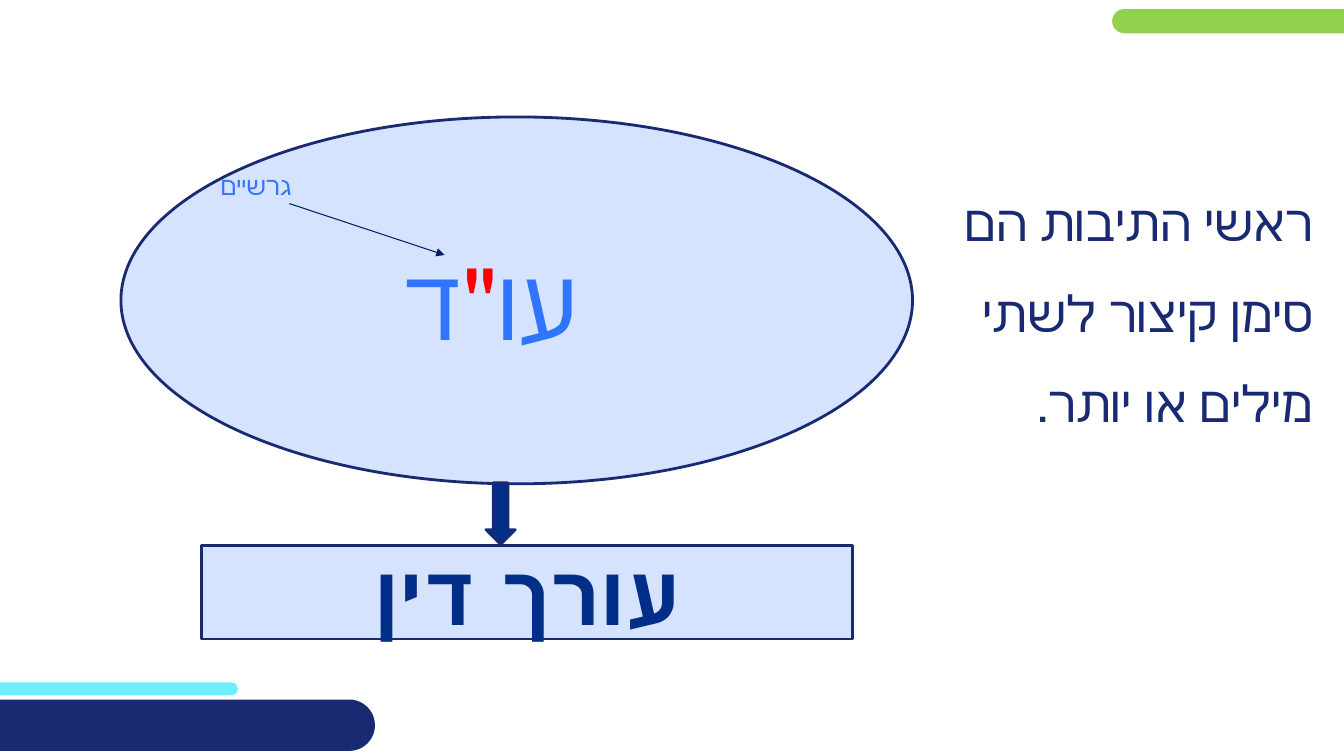
import pptx
import pptx.dml.color
import pptx.enum.shapes
import pptx.enum.text
import pptx.oxml
import pptx.oxml.ns
import pptx.util

RGBColor = pptx.dml.color.RGBColor
SHAPE = pptx.enum.shapes.MSO_SHAPE
ALIGN = pptx.enum.text.PP_ALIGN
ANCHOR = pptx.enum.text.MSO_ANCHOR

NAVY = RGBColor(0x19, 0x2A, 0x72)
DEEP_BLUE = RGBColor(0x00, 0x2E, 0x89)
POINTER_BLUE = RGBColor(0x00, 0x20, 0x60)
BRIGHT_BLUE = RGBColor(0x30, 0x75, 0xFF)
PALE_BLUE = RGBColor(0xD6, 0xE3, 0xFF)
CYAN = RGBColor(0x6C, 0xF0, 0xFF)
GREEN = RGBColor(0x92, 0xD0, 0x50)
RED = RGBColor(0xFF, 0x00, 0x00)

FONT = "TeX Gyre Adventor"
SLIDE_WIDTH = pptx.util.Inches(13.33)
SLIDE_HEIGHT = pptx.util.Inches(7.5)


def share(*percents):
    """Turn alternating horizontal and vertical percentages into lengths."""
    sides = (SLIDE_WIDTH, SLIDE_HEIGHT) * 2
    return [int(side * percent / 100) for side, percent in zip(sides, percents)]


def add_figure(slide, kind, area, fill, outline=None):
    figure = slide.shapes.add_shape(kind, *share(*area))
    figure.shadow.inherit = False
    figure.fill.solid()
    figure.fill.fore_color.rgb = fill
    if outline is None:
        figure.line.fill.background()
    else:
        figure.line.color.rgb = outline
        figure.line.width = pptx.util.Pt(2)
    return figure


def add_bar(slide, area, fill):
    bar = add_figure(slide, SHAPE.ROUNDED_RECTANGLE, area, fill)
    bar.adjustments[0] = 0.5


def write_hebrew(holder, pieces, size, align, anchor, bold=False):
    """Fill a shape with one right-to-left paragraph of (text, colour) runs."""
    frame = holder.text_frame
    frame.word_wrap = True
    frame.vertical_anchor = anchor
    paragraph = frame.paragraphs[0]
    paragraph.alignment = align
    paragraph._p.get_or_add_pPr().set("rtl", "1")
    for text, colour in pieces:
        run = paragraph.add_run()
        run.text = text
        run.font.size = pptx.util.Pt(size)
        run.font.bold = bold
        run.font.name = FONT
        run.font.color.rgb = colour
        run._r.get_or_add_rPr().set("lang", "he-IL")
    return paragraph


def add_caption(slide, area, text, size, colour, anchor):
    caption = slide.shapes.add_textbox(*share(*area))
    return write_hebrew(caption, [(text, colour)], size, ALIGN.RIGHT, anchor)


def end_with_break(paragraph, size):
    """Close a paragraph with a line break of the given text size."""
    paragraph.add_line_break()
    namespace = pptx.oxml.ns.nsdecls("a")
    paragraph._p.append(pptx.oxml.parse_xml(
        f'<a:endParaRPr {namespace} lang="he-IL" sz="{size * 100}">'
        f'<a:latin typeface="{FONT}"/></a:endParaRPr>'))


def add_pointer(slide, start, end):
    pointer = slide.shapes.add_connector(
        pptx.enum.shapes.MSO_CONNECTOR.STRAIGHT, *share(*start, *end))
    pointer.line.color.rgb = POINTER_BLUE
    pointer.line.width = pptx.util.Pt(0.75)
    namespace = pptx.oxml.ns.nsdecls("a")
    pointer.line._get_or_add_ln().append(
        pptx.oxml.parse_xml(f'<a:tailEnd {namespace} type="triangle"/>'))
    pointer._element.spPr.append(
        pptx.oxml.parse_xml(f"<a:effectLst {namespace}/>"))


def main():
    deck = pptx.Presentation()
    deck.slide_width, deck.slide_height = SLIDE_WIDTH, SLIDE_HEIGHT
    slide = deck.slides.add_slide(deck.slide_layouts[6])

    # Decorative bars running off the edges
    add_bar(slide, (-7.5, 90.27, 25.2, 1.73), CYAN)
    add_bar(slide, (82.75, 1.2, 43.5, 3.2), GREEN)
    add_bar(slide, (-17.7, 92.53, 45.6, 6.8), NAVY)

    # Definition
    definition = add_caption(
        slide, (69.17, 11.07, 29.26, 64.4),
        "ראשי התיבות הם סימן קיצור לשתי מילים או יותר.", 36, NAVY, ANCHOR.MIDDLE)
    definition.line_spacing = 1.5
    end_with_break(definition, 36)

    # Abbreviation, set slightly left of the ellipse's centre
    abbreviation = add_figure(
        slide, SHAPE.OVAL, (9, 15.47, 58.9, 48.53), PALE_BLUE, NAVY)
    write_hebrew(abbreviation,
                 [("עו", BRIGHT_BLUE), ('"', RED), ("ד", BRIGHT_BLUE)],
                 72, ALIGN.CENTER, ANCHOR.MIDDLE)
    abbreviation.text_frame.margin_right = pptx.util.Inches(0.62)

    # Full form
    add_figure(slide, SHAPE.DOWN_ARROW, (36.16, 63.87, 2.18, 8.13), DEEP_BLUE, NAVY)
    full_form = add_figure(
        slide, SHAPE.RECTANGLE, (15, 72.13, 48.46, 12.4), PALE_BLUE, NAVY)
    write_hebrew(full_form, [("עורך דין", DEEP_BLUE)], 60,
                 ALIGN.CENTER, ANCHOR.MIDDLE, bold=True)

    # Label for the quotation mark
    add_pointer(slide, (21.53, 26.93), (33.08, 33.73))
    add_caption(slide, (14.93, 21.87, 7.5, 5.33), "גרשיים", 18, BRIGHT_BLUE, ANCHOR.TOP)

    deck.save("out.pptx")


if __name__ == "__main__":
    main()
